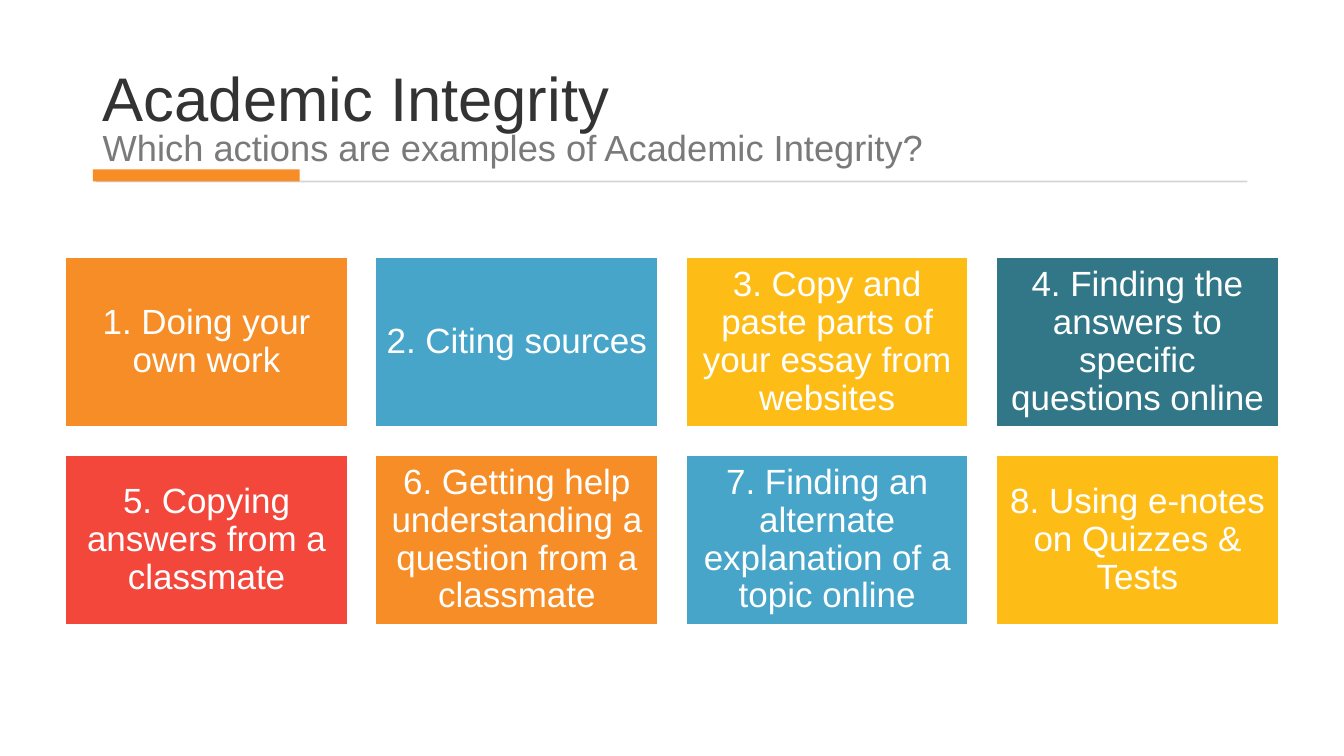
from dataclasses import dataclass

import pptx
import pptx.dml.color
import pptx.enum.shapes
import pptx.enum.text
import pptx.util
from pptx.util import Cm


@dataclass(frozen=True)
class Theme:
    font: str = "Arial"
    title_size: float = 44
    subtitle_size: float = 25.9
    tile_size: float = 25
    title: str = "333333"
    subtitle: str = "7A7A7A"
    rule: str = "D5D5D5"
    white: str = "FFFFFF"
    orange: str = "F78D26"
    blue: str = "47A5C9"
    yellow: str = "FDBC16"
    teal: str = "327788"
    red: str = "F4473C"


THEME = Theme()
ANCHOR = pptx.enum.text.MSO_ANCHOR

TILES = [
    ("1. Doing your own work", THEME.orange),
    ("2. Citing sources", THEME.blue),
    ("3. Copy and paste parts of your essay from websites", THEME.yellow),
    ("4. Finding the answers to specific questions online", THEME.teal),
    ("5. Copying answers from a classmate", THEME.red),
    ("6. Getting help understanding a question from a classmate", THEME.orange),
    ("7. Finding an alternate explanation of a topic online", THEME.blue),
    ("8. Using e-notes on Quizzes & Tests", THEME.yellow),
]
COLUMNS = 4
GRID_LEFT, GRID_TOP = 1.65, 6.49
TILE_W, TILE_H = 7.11, 4.27
GAP_X, GAP_Y = 0.71, 0.71


def rgb(color):
    return pptx.dml.color.RGBColor.from_string(color)


def write(tf, text, size, color, spacing, anchor):
    tf.word_wrap = True
    tf.vertical_anchor = anchor
    tf.text = text
    p = tf.paragraphs[0]
    p.line_spacing = spacing
    font = p.runs[0].font
    font.name = THEME.font
    font.size = pptx.util.Pt(size)
    font.color.rgb = rgb(color)
    return p


def add_text(s, text, left, top, width, height, **style):
    tb = s.shapes.add_textbox(Cm(left), Cm(top), Cm(width), Cm(height))
    write(tb.text_frame, text, **style)


def add_bar(s, left, top, width, height, color):
    sp = s.shapes.add_shape(pptx.enum.shapes.MSO_SHAPE.RECTANGLE,
                            Cm(left), Cm(top), Cm(width), Cm(height))
    sp.shadow.inherit = False
    sp.fill.solid()
    sp.fill.fore_color.rgb = rgb(color)
    sp.line.fill.background()
    return sp


def add_tile(s, index, text, color):
    row, col = divmod(index, COLUMNS)
    sp = add_bar(s, GRID_LEFT + col * (TILE_W + GAP_X),
                 GRID_TOP + row * (TILE_H + GAP_Y), TILE_W, TILE_H, color)
    sp.line.color.rgb = rgb(THEME.white)
    sp.line.width = pptx.util.Pt(1)
    tf = sp.text_frame
    tf.margin_left = tf.margin_right = Cm(0.25)
    tf.margin_top = tf.margin_bottom = Cm(0.25)
    p = write(tf, text, THEME.tile_size, THEME.white, 0.9, ANCHOR.MIDDLE)
    p.alignment = pptx.enum.text.PP_ALIGN.CENTER


def main():
    prs = pptx.Presentation()
    prs.slide_width, prs.slide_height = Cm(33.87), Cm(19.05)
    s = prs.slides.add_slide(prs.slide_layouts[6])

    add_text(s, "Academic Integrity", 2.34, 0.71, 29.18, 2.82,
             size=THEME.title_size, color=THEME.title, spacing=0.9,
             anchor=ANCHOR.BOTTOM)
    add_bar(s, 2.41, 4.55, 29.03, 0.05, THEME.rule)
    add_bar(s, 2.34, 4.27, 5.21, 0.3, THEME.orange)
    for index, (text, color) in enumerate(TILES):
        add_tile(s, index, text, color)
    add_text(s, "Which actions are examples of Academic Integrity?",
             2.34, 3.25, 29.18, 1.17,
             size=THEME.subtitle_size, color=THEME.subtitle, spacing=0.8,
             anchor=ANCHOR.TOP)

    prs.save("out.pptx")


if __name__ == "__main__":
    main()
